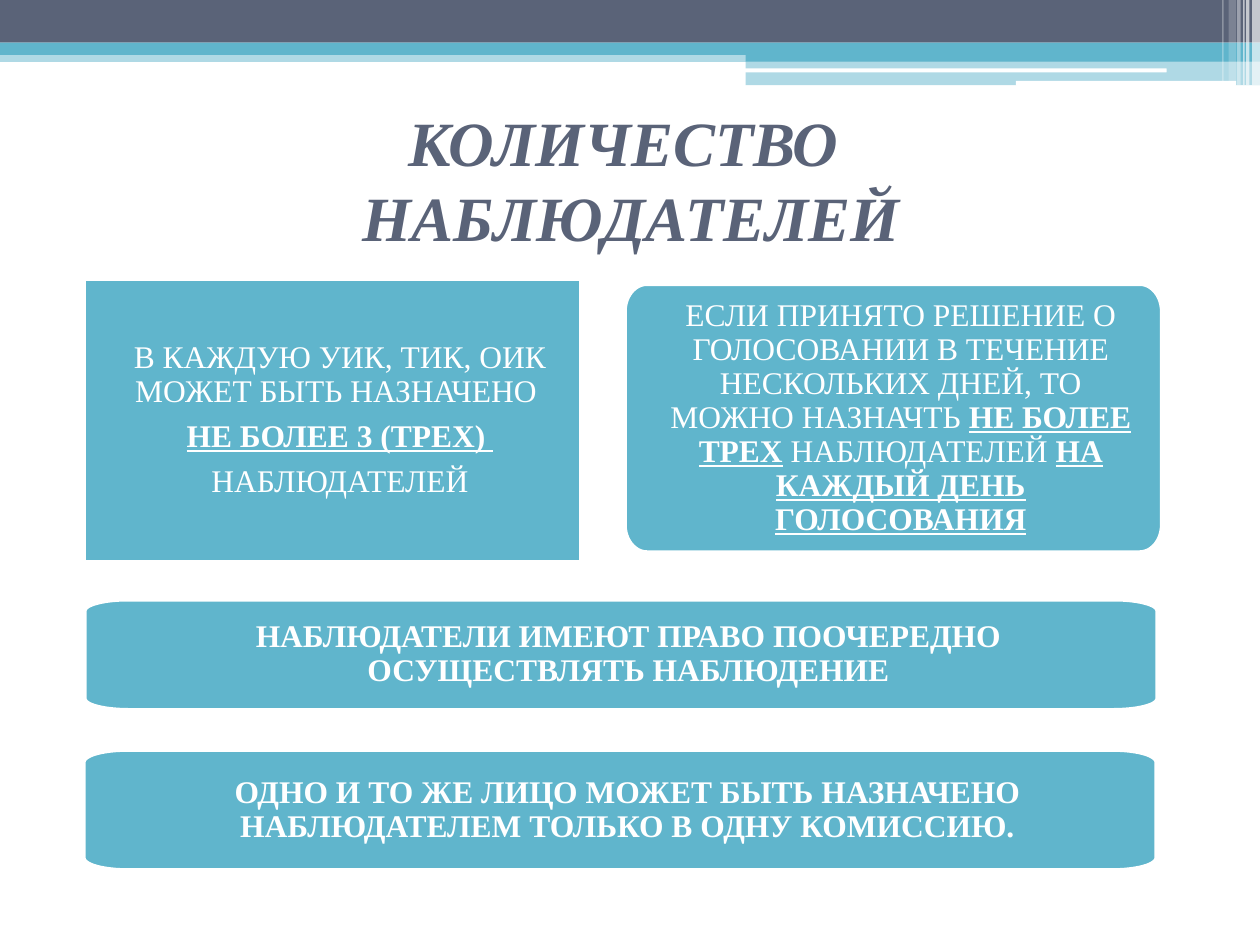
from math import cos, pi, sin

from lxml.etree import SubElement
from pptx import Presentation
from pptx.dml.color import RGBColor
from pptx.enum.shapes import MSO_SHAPE as SHAPE
from pptx.enum.text import MSO_ANCHOR as ANCHOR, PP_ALIGN as ALIGN
from pptx.oxml.ns import qn
from pptx.util import Cm, Pt

TEAL, SLATE, WHITE = "60B5CC", "5A6378", "FFFFFF"
FONT = "Times New Roman"
EMPHASIS = {"bold": True, "underline": True}


def color(value):
    return RGBColor.from_string(value)


def paint(sp, fill, alpha=100, line=None):
    sp.shadow.inherit = False
    sp.fill.solid()
    sp.fill.fore_color.rgb = color(fill)
    if alpha < 100:
        clr = sp.fill._xPr.find(qn("a:solidFill"))[0]
        SubElement(clr, qn("a:alpha"), val=str(alpha * 1000))
    if line:
        sp.line.color.rgb = color(line)
        sp.line.width = Pt(1.5)
    else:
        sp.line.fill.background()


def add_run(p, text, size, fill, **style):
    r = p.add_run()
    r.text = text
    for name, value in {"name": FONT, "size": Pt(size), **style}.items():
        setattr(r.font, name, value)
    r.font.color.rgb = color(fill)


def add_header(s, left, top, width):
    mid = 15.03
    bars = [
        (0, 1.02, width, 0.23, TEAL, 50),
        (0, 0, width, 0.86, SLATE, 100),
        (0, 0.86, width, 0.25, TEAL, 100),
        (mid, 0.99, width - mid, 0.25, TEAL, 100),
        (mid, 1.23, width - mid, 0.49, TEAL, 50),
    ]
    pills = [(15.01, 1.38, 8.51, 0.08), (20.48, 1.63, 4.44, 0.1)]
    stripes = [
        (25.24, 0.16, 1.72, 65), (25.12, 0.07, 1.72, 65),
        (25.06, 0.03, 1.72, 60), (24.94, 0.07, 1.72, 40),
        (24.77, 0.15, 1.63, 20), (24.64, 0.03, 1.63, 30),
    ]
    parts = [(SHAPE.RECTANGLE, *bar) for bar in bars]
    parts += [(SHAPE.ROUNDED_RECTANGLE, *pill, WHITE, 100) for pill in pills]
    parts += [(SHAPE.RECTANGLE, x, 0, w, h, WHITE, a) for x, w, h, a in stripes]
    for kind, x, y, w, h, fill, alpha in parts:
        sp = s.shapes.add_shape(kind, Cm(left + x), Cm(top + y), Cm(w), Cm(h))
        paint(sp, fill, alpha)


def add_title(s, left, top, width, height, text):
    sp = s.shapes.add_textbox(Cm(left), Cm(top), Cm(width), Cm(height))
    tf = sp.text_frame
    tf.word_wrap = True
    tf.vertical_anchor = ANCHOR.MIDDLE
    p = tf.paragraphs[0]
    p.alignment = ALIGN.CENTER
    first, second = text
    style = {"bold": True, "italic": True}
    add_run(p, first, 36, SLATE, **style)
    p.add_line_break()
    add_run(p, second, 36, SLATE, **style)


def rounded_outline(s, left, top, width, height):
    rx, ry, steps = width * 0.04, height * 0.1, 12
    centers = [
        (left + width - rx, top + height - ry), (left + rx, top + height - ry),
        (left + rx, top + ry), (left + width - rx, top + ry),
    ]
    points = []
    for corner, (cx, cy) in enumerate(centers):
        for step in range(steps + 1):
            angle = (corner + step / steps) * pi / 2
            points.append((Cm(cx + rx * cos(angle)), Cm(cy + ry * sin(angle))))
    fb = s.shapes.build_freeform(*points[0], scale=1.0)
    fb.add_line_segments(points[1:], close=True)
    return fb.convert_to_shape()


def add_card(s, left, top, width, height, paragraphs, rounded=True):
    if rounded:
        sp = rounded_outline(s, left, top, width, height)
    else:
        sp = s.shapes.add_shape(
            SHAPE.RECTANGLE, Cm(left), Cm(top), Cm(width), Cm(height))
    paint(sp, TEAL, line=WHITE)
    tf = sp.text_frame
    tf.word_wrap = True
    tf.vertical_anchor = ANCHOR.MIDDLE
    margins = {"left": 0.35, "top": 0.25, "right": 0.35, "bottom": 0.25}
    for side, value in margins.items():
        setattr(tf, f"margin_{side}", Cm(value))
    layout = {"alignment": ALIGN.CENTER, "line_spacing": 0.9,
              "space_after": Pt(6.3)}
    for i, runs in enumerate(paragraphs):
        p = tf.add_paragraph() if i else tf.paragraphs[0]
        for name, value in layout.items():
            setattr(p, name, value)
        pPr = p._p.get_or_add_pPr()
        pPr.set("marL", str(Cm(0.3)))
        pPr.set("indent", "0")
        for text, style in runs:
            add_run(p, text, 18, WHITE, **style)


def main():
    prs = Presentation()
    prs.slide_width, prs.slide_height = Cm(25.4), Cm(19.05)
    s = prs.slides.add_slide(prs.slide_layouts[6])
    add_header(s, 0, 0, 25.4)
    add_title(s, 1.3, 2.12, 22.86, 2.97, ("КОЛИЧЕСТВО ", "НАБЛЮДАТЕЛЕЙ"))
    add_card(s, 1.7, 5.63, 10.01, 5.68, [
        [("В КАЖДУЮ УИК, ТИК, ОИК МОЖЕТ БЫТЬ НАЗНАЧЕНО ", {})],
        [("НЕ БОЛЕЕ 3 (ТРЕХ) ", EMPHASIS)],
        [("НАБЛЮДАТЕЛЕЙ", {})],
    ], rounded=False)
    add_card(s, 12.61, 5.74, 10.8, 5.38, [[
        ("ЕСЛИ ПРИНЯТО РЕШЕНИЕ О ГОЛОСОВАНИИ В ТЕЧЕНИЕ "
         "НЕСКОЛЬКИХ ДНЕЙ, ТО МОЖНО НАЗНАЧТЬ ", {}),
        ("НЕ БОЛЕЕ ТРЕХ", EMPHASIS),
        (" НАБЛЮДАТЕЛЕЙ ", {}),
        ("НА КАЖДЫЙ ДЕНЬ ГОЛОСОВАНИЯ", EMPHASIS),
    ]])
    notes = [
        (1.72, 12.1, 2.2, "НАБЛЮДАТЕЛИ ИМЕЮТ ПРАВО ПООЧЕРЕДНО "
                          "ОСУЩЕСТВЛЯТЬ НАБЛЮДЕНИЕ"),
        (1.7, 15.13, 2.4, "ОДНО И ТО ЖЕ ЛИЦО МОЖЕТ БЫТЬ НАЗНАЧЕНО "
                          "НАБЛЮДАТЕЛЕМ ТОЛЬКО В ОДНУ КОМИССИЮ."),
    ]
    for left, top, height, text in notes:
        add_card(s, left, top, 21.6, height, [[(text, {"bold": True})]])
    prs.save("out.pptx")


if __name__ == "__main__":
    main()
